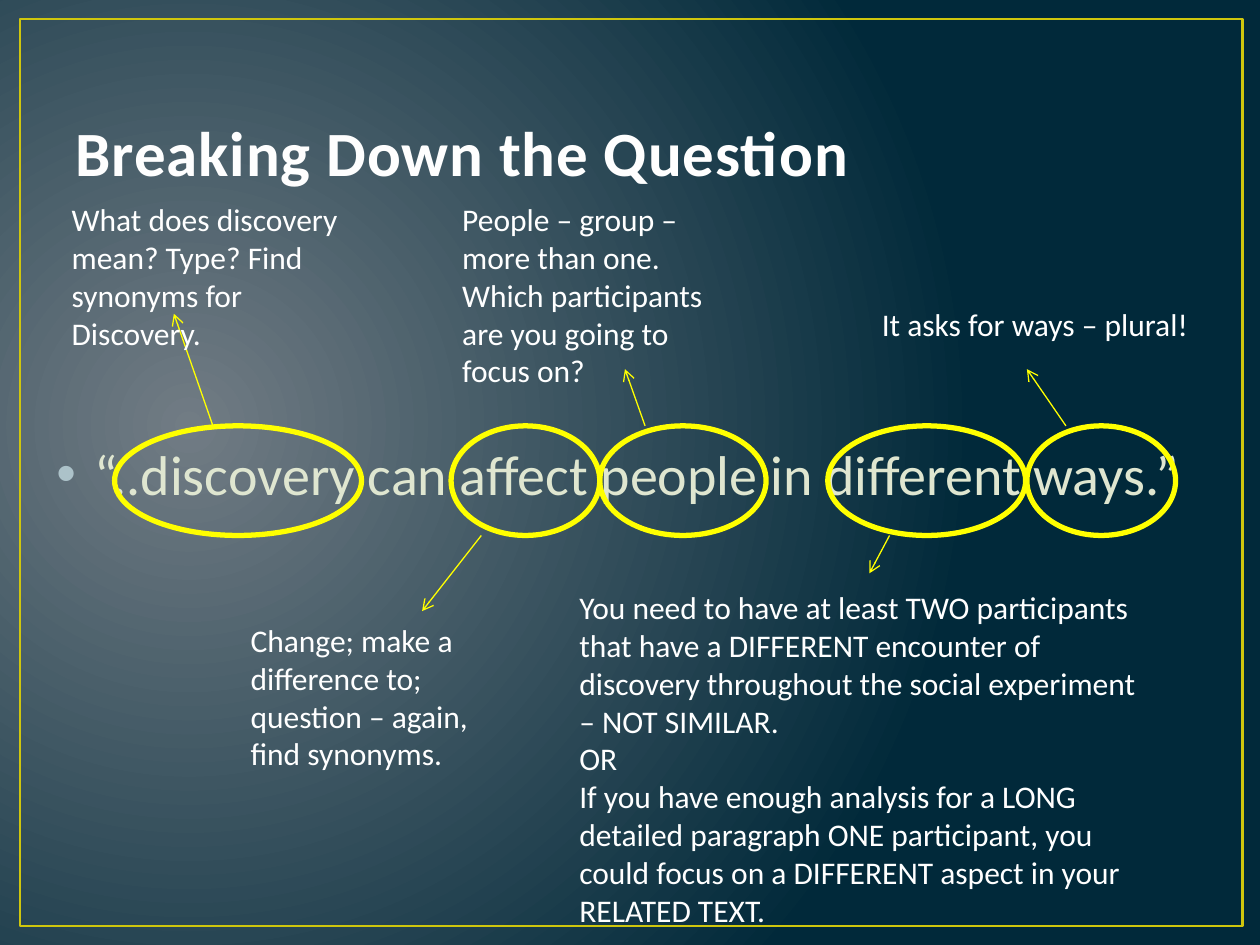
from lxml.etree import SubElement
from pptx import Presentation
from pptx.dml.color import RGBColor
from pptx.enum.shapes import MSO_CONNECTOR, MSO_SHAPE
from pptx.enum.text import MSO_ANCHOR, MSO_AUTO_SIZE, PP_ALIGN
from pptx.oxml.ns import qn
from pptx.util import Inches, Pt

RECT, OVAL = MSO_SHAPE.RECTANGLE, MSO_SHAPE.OVAL
LINE = MSO_CONNECTOR.STRAIGHT
BOTTOM, LEFT = MSO_ANCHOR.BOTTOM, PP_ALIGN.LEFT
GROW = MSO_AUTO_SIZE.SHAPE_TO_FIT_TEXT

GREY = RGBColor(0x71, 0x7C, 0x84)
NAVY = RGBColor(0x01, 0x29, 0x3A)
GOLD = RGBColor(0xCF, 0xC6, 0x0D)
YELLOW = RGBColor(0xFF, 0xFF, 0x00)
WHITE = RGBColor(0xFF, 0xFF, 0xFF)
SNOW = RGBColor(0xFE, 0xFE, 0xFE)
CREAM = RGBColor(0xDF, 0xE6, 0xD0)
BULLET = "ACC2C9"

FONT = "Calibri"
TOP, HIGH = 3.38, 0.87

# left and width of the ring round each key word
RINGS = [(0.91, 1.96), (3.58, 1.18), (4.76, 1.32), (6.57, 1.57), (8.15, 1.18)]

# start and end of the arrow from each ring to its note
ARROWS = [
    (1.69, TOP, 1.38, 2.49),
    (3.82, TOP + HIGH, 3.35, 4.85),
    (5.12, TOP, 4.96, 2.93),
    (7.06, TOP + HIGH, 6.9, 4.55),
    (8.46, TOP, 8.15, 2.93),
]

NOTES = [
    ((0.47, 1.54, 2.55, 1.01),
     ["What does discovery mean? Type? Find synonyms for Discovery."]),
    ((1.89, 4.88, 2.28, 1.31),
     ["Change; make a difference to; question – again, find synonyms."]),
    ((3.57, 1.54, 2.28, 1.62),
     ["People – group – more than one. Which participants are you going to "
      "focus on?"]),
    ((4.5, 4.62, 4.67, 2.83),
     ["You need to have at least TWO participants that have a DIFFERENT "
      "encounter of discovery throughout the social experiment – NOT SIMILAR.",
      "OR",
      "If you have enough analysis for a LONG detailed paragraph ONE "
      "participant, you could focus on a DIFFERENT aspect in your RELATED "
      "TEXT."]),
    ((6.9, 2.37, 2.67, 0.4), ["It asks for ways – plural!"]),
]


def inches(vals):
    return [Inches(v) for v in vals]


def set_font(para, size, color, bold=False):
    font = para.font
    font.name, font.size, font.bold = FONT, Pt(size), bold
    font.color.rgb = color


def paint_back(slide):
    """Fill the background with a round glow on the left."""
    fill = slide.background.fill
    fill.gradient()
    for stop, color, pos in zip(fill.gradient_stops, (GREY, NAVY), (0, 1)):
        stop.color.rgb = color
        stop.position = pos
    grad = slide.element.find(".//" + qn("a:gradFill"))
    grad.remove(grad.find(qn("a:lin")))
    glow = SubElement(grad, qn("a:path"), path="circle")
    SubElement(glow, qn("a:fillToRect"),
               l="15000", t="50000", r="85000", b="60000")


def add_outline(slide, kind, box, color, width):
    shape = slide.shapes.add_shape(kind, *inches(box))
    shape.shadow.inherit = False
    shape.fill.background()
    shape.line.color.rgb = color
    shape.line.width = Pt(width)


def set_title(slide, text):
    title = slide.shapes.title
    title.left, title.top, title.width, title.height = inches(
        (0.5, 0.3, 9, 1.25))
    frame = title.text_frame
    frame.text = text
    frame.vertical_anchor = BOTTOM
    para = frame.paragraphs[0]
    para.alignment = LEFT
    set_font(para, 36, SNOW, True)
    para.runs[0].font._element.set("spc", "50")


def add_text(slide, box, lines, size, color):
    frame = slide.shapes.add_textbox(*inches(box)).text_frame
    frame.word_wrap = True
    frame.text = "\n".join(lines)
    for para in frame.paragraphs:
        set_font(para, size, color)
    return frame


def add_quote(slide, text):
    frame = add_text(slide, (0.35, 3.44, 9.16, 1.84), [text], 32, CREAM)
    props = frame.paragraphs[0]._p.get_or_add_pPr()
    props.set("marL", str(Inches(0.3)))
    props.set("indent", str(Inches(-0.3)))
    mark = SubElement(props, qn("a:buClr"))
    SubElement(mark, qn("a:srgbClr"), val=BULLET)
    SubElement(props, qn("a:buFont"), typeface="Arial")
    SubElement(props, qn("a:buChar"), char="•")
    # the schema wants the default run properties after the bullet
    props.append(props.find(qn("a:defRPr")))


def add_arrow(slide, ends):
    arrow = slide.shapes.add_connector(LINE, *inches(ends))
    arrow.line.color.rgb = YELLOW
    arrow.line.width = Pt(0.75)
    SubElement(arrow.line._get_or_add_ln(), qn("a:tailEnd"), type="arrow")
    SubElement(arrow._element.spPr, qn("a:effectLst"))


def main():
    prs = Presentation()
    prs.slide_width, prs.slide_height = Inches(10), Inches(7.5)
    slide = prs.slides.add_slide(prs.slide_layouts[5])
    paint_back(slide)
    add_outline(slide, RECT, (0.16, 0.15, 9.7, 7.2), GOLD, 1.5)
    set_title(slide, "Breaking Down the Question")
    add_quote(slide, "“..discovery can affect people in different ways.”")
    for left, width in RINGS:
        add_outline(slide, OVAL, (left, TOP, width, HIGH), YELLOW, 3)
    for ends in ARROWS:
        add_arrow(slide, ends)
    for box, lines in NOTES:
        add_text(slide, box, lines, 18, WHITE).auto_size = GROW
    prs.save("out.pptx")


if __name__ == "__main__":
    main()
